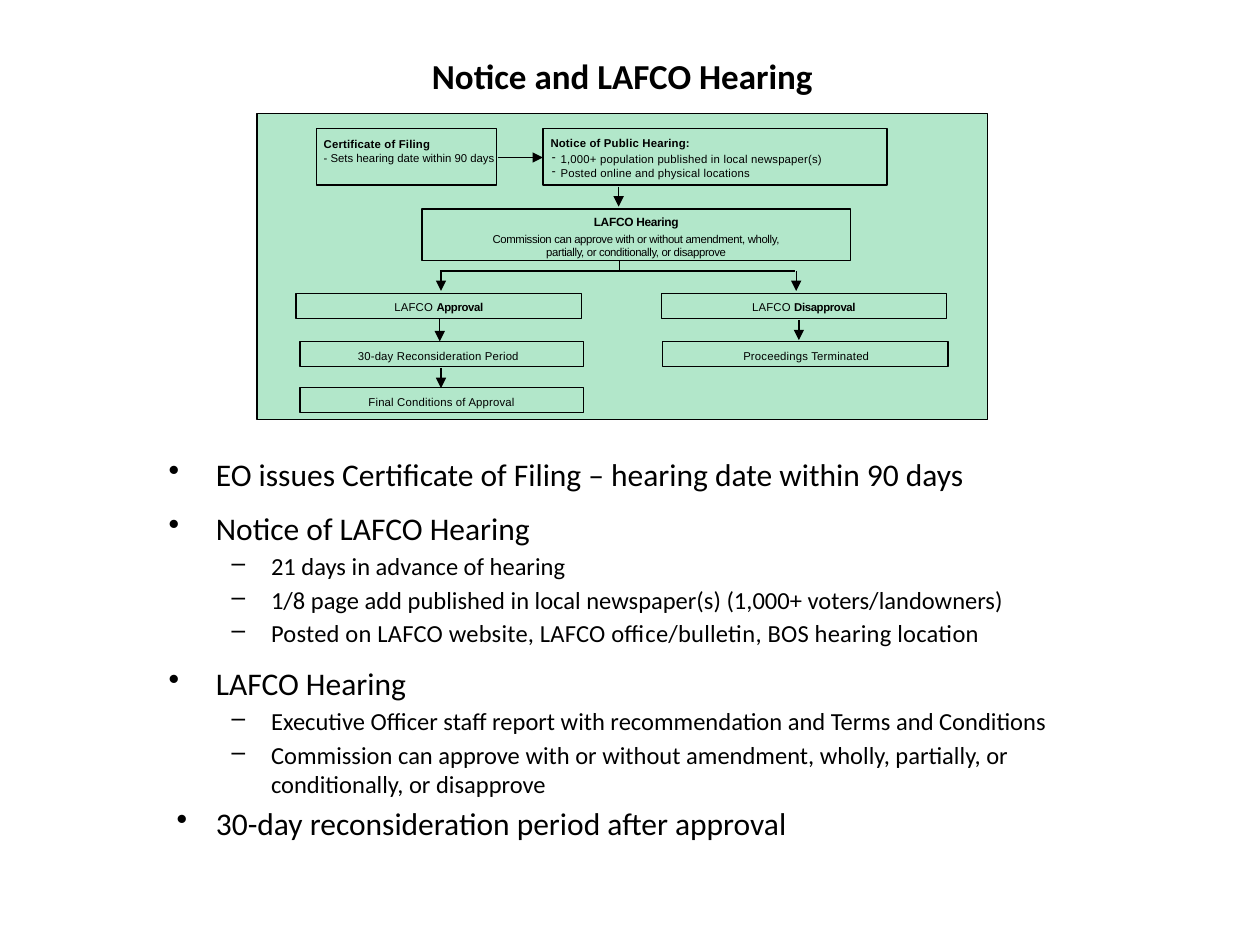
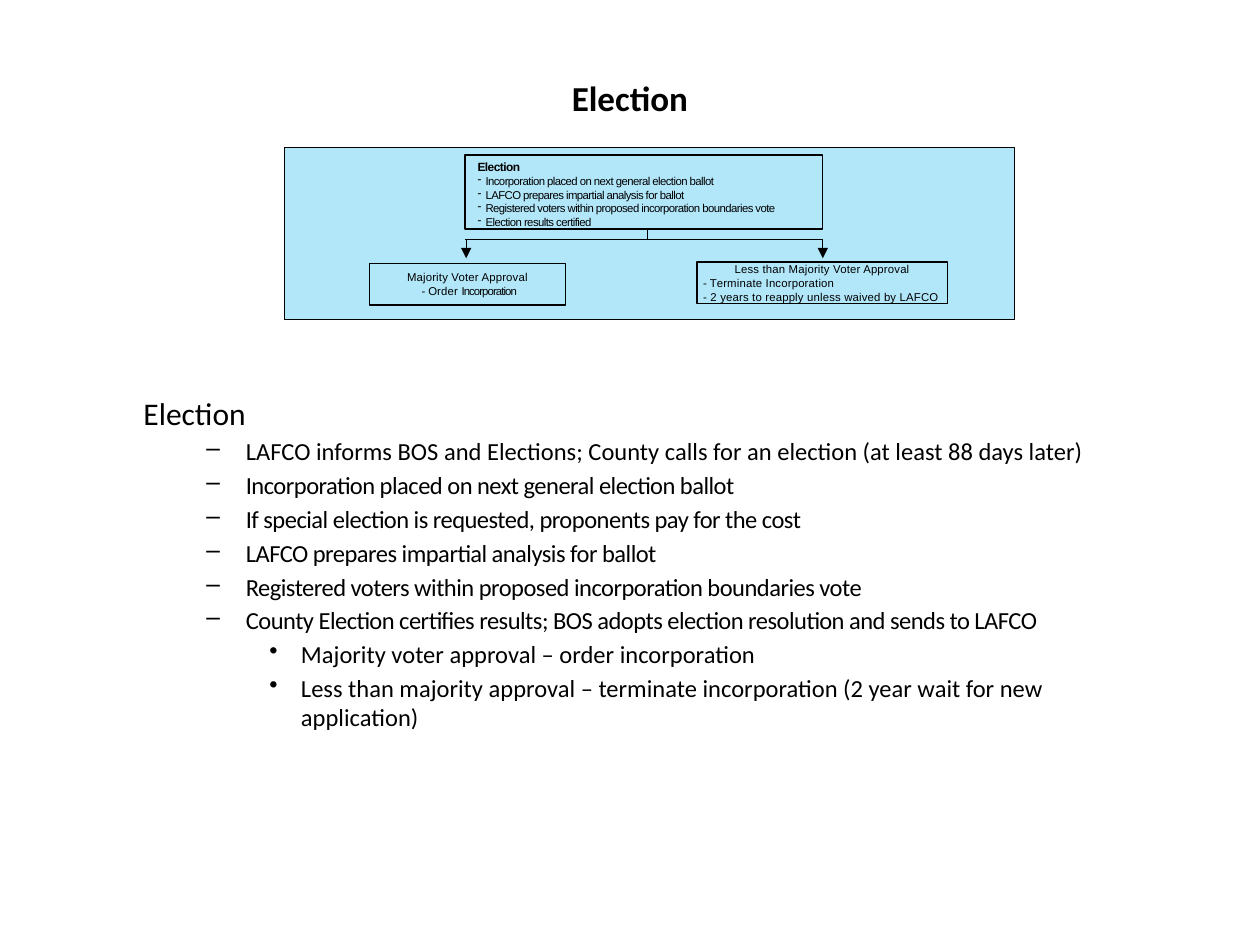
from lxml.etree import SubElement
from pptx import Presentation
from pptx.dml.color import RGBColor as RGB
from pptx.enum.shapes import MSO_CONNECTOR as CONNECTOR, MSO_SHAPE as SHAPE
from pptx.enum.text import MSO_ANCHOR as ANCHOR, PP_ALIGN as ALIGN
from pptx.oxml.ns import qn
from pptx.util import Pt

COLORS = {"ink": "000000", "hearing": "00B050", "election": "00B0F0"}
INK = RGB.from_string(COLORS["ink"])
LINE_WIDTH = Pt(0.75)
CENTER = ALIGN.CENTER

# Outline styles: list level, size, left margin, first-line indent, bullet
OUTLINE = {
    "heading": dict(level=0, size=18),
    "point": dict(level=0, size=18, margin=27, indent=-27, bullet="•"),
    "dash": dict(level=1, size=14, margin=58.5, indent=-22.5, bullet="–"),
    "dot": dict(level=2, size=14, margin=90, indent=-18, bullet="•"),
    "last": dict(level=1, size=18, margin=27, indent=-22.5, bullet="•"),
}


def add_text(page, at, paragraphs, font="Arial", inset=True):
    """Each paragraph is a dict; its runs are (text, spacing, bold)."""
    box = page.shapes.add_textbox(*map(Pt, at))
    frame = box.text_frame
    frame.word_wrap = True
    frame.vertical_anchor = ANCHOR.TOP
    if not inset:
        frame.margin_left = frame.margin_right = 0
        frame.margin_top = frame.margin_bottom = 0
    for index, item in enumerate(paragraphs):
        para = frame.add_paragraph() if index else frame.paragraphs[0]
        para.level = item.get("level", 0)
        para.alignment = item.get("align", ALIGN.LEFT)
        props = para._p.get_or_add_pPr()
        props.set("marL", str(Pt(item.get("margin", 0))))
        props.set("indent", str(Pt(item.get("indent", 0))))
        if "bullet" in item:
            SubElement(props, qn("a:buChar")).set("char", item["bullet"])
        para.space_before = Pt(item.get("before", 0) if index else 0)
        para.space_after = Pt(item.get("after", 0))
        para.line_spacing = item.get("lines", 1.0)
        for text, spacing, bold in item["runs"]:
            span = para.add_run()
            span.text = text
            span.font.name = font
            span.font.size = Pt(item.get("size", 6.5))
            span.font.bold = bold
            span.font.color.rgb = INK
            if spacing:
                span._r.get_or_add_rPr().set("spc", str(round(spacing * 100)))


def add_line(page, ends, arrow):
    line = page.shapes.add_connector(CONNECTOR.STRAIGHT, *map(Pt, ends))
    line.line.color.rgb = INK
    line.line.width = LINE_WIDTH
    SubElement(line._element.spPr, qn("a:effectLst"))
    if arrow:
        SubElement(line.line._get_or_add_ln(), qn("a:tailEnd")).set("type", "triangle")


# Flow-chart nodes: frame, label place, label paragraphs
hearing_nodes = [
    ((180.7, 73.4, 103.2, 32.4), (185, 78.5, 99.4, 15.8), [
        dict(runs=[("Certificate of Filing", 0.1, True)]),
        dict(runs=[("- Sets hearing date within 90 days", 0, False)]),
    ]),
    ((310.3, 73.4, 196.6, 32.4), (314.6, 77.8, 200.2, 24.5), [
        dict(runs=[("Notice of Public Hearing:", 0.1, True)]),
        dict(runs=[("1,000+ population published in local newspaper(s)", 0.1, False)],
             margin=5.8, indent=-5, bullet="-", before=0.7, lines=1.05),
        dict(runs=[("Posted online and physical locations", 0.1, False)],
             margin=5.8, indent=-5, bullet="-", lines=1.05),
    ]),
    ((241.2, 119.5, 244.8, 29.5), (241.2, 122.4, 244.8, 25.9), [
        dict(runs=[("LAFCO Hearing", -0.2, True)], size=6.8, align=CENTER, after=2),
        dict(runs=[("Commission can approve with or without amendment, wholly,", -0.2, False)],
             align=CENTER),
        dict(runs=[("partially, or conditionally, or disapprove", -0.2, False)], align=CENTER),
    ]),
    ((169.2, 167.8, 163, 14.4), (225.4, 171.4, 52.6, 7.9), [
        dict(runs=[("LAFCO ", 0.1, False), ("Approval", -0.2, True)]),
    ]),
    ((378, 167.8, 163, 14.4), (429.8, 171.4, 60.5, 7.9), [
        dict(runs=[("LAFCO ", 0.1, False), ("Disapproval", -0.2, True)]),
    ]),
    ((171.4, 195.1, 162, 14.4), (204.5, 199.4, 94.3, 7.9), [
        dict(runs=[("30-day Reconsideration Period", 0.1, False)]),
    ]),
    ((378.7, 195.1, 163, 14.4), (413.3, 199.4, 95, 7.9), [
        dict(runs=[("Proceedings Terminated", 0.1, False)], align=CENTER),
    ]),
    ((171.4, 221.3, 162, 14.4), (171.4, 225.4, 162, 7.9), [
        dict(runs=[("Final Conditions of Approval", 0.1, False)], align=CENTER, lines=1.05),
    ]),
]

ballot_steps = [
    "Incorporation placed on next general election ballot",
    "LAFCO prepares impartial analysis for ballot",
    "Registered voters within proposed incorporation boundaries vote",
    "Election results certified",
]
election_nodes = [
    ((265.7, 88.6, 204.5, 42.2), (272.9, 91.4, 172.8, 39.6),
     [dict(runs=[("Election", -0.3, True)], size=6.8)]
     + [dict(runs=[(step, -0.3, False)], margin=4.6, indent=-4.6, bullet="-")
        for step in ballot_steps]),
    ((211, 150.5, 112.3, 23.8), (211, 154.1, 112.3, 15.8), [
        dict(runs=[("Majority Voter Approval", 0.1, False)], align=CENTER),
        dict(runs=[("- O", 0, False), ("rder ", 0.1, False), ("Incorporation", -0.5, False)],
             align=CENTER, margin=2, before=0.4),
    ]),
    ((398.2, 149.8, 143.3, 23.8), (398.2, 149.8, 143.3, 23.8), [
        dict(runs=[("Less than Majority Voter Approval", 0.1, False)], align=CENTER),
        dict(runs=[("- T", 0, False), ("erminate Incorporation", 0.1, False)],
             margin=3.6, before=0.2),
        dict(runs=[("- 2 years to reapply unless waived by LAFCO", 0.1, False)],
             margin=3.6, before=0.2),
    ]),
]

# Outline rows: style, text, letter spacing, space after
hearing_outline = [
    ("point", "EO issues Certificate of Filing – hearing date within 90 days", 0, 6),
    ("point", "Notice of LAFCO Hearing", 0, 0),
    ("dash", "21 days in advance of hearing", 0, 0),
    ("dash", "1/8 page add published in local newspaper(s) (1,000+ voters/landowners)", 0, 0),
    ("dash", "Posted on LAFCO website, LAFCO office/bulletin, BOS hearing location", 0.1, 6),
    ("point", "LAFCO Hearing", 0, 0),
    ("dash", "Executive Officer staff report with recommendation and Terms and Conditions", 0, 0),
    ("dash", "Commission can approve with or without amendment, wholly, partially, or "
             "conditionally, or disapprove", 0, 0),
    ("last", "30-day reconsideration period after approval", 0, 0),
]
election_outline = [
    ("heading", "Election", 0, 0),
    ("dash", "LAFCO informs BOS and Elections; County calls for an election "
             "(at least 88 days later)", 0, 0),
    ("dash", "Incorporation placed on next general election ballot", -0.3, 0),
    ("dash", "If special election is requested, proponents pay for the cost", -0.3, 0),
    ("dash", "LAFCO prepares impartial analysis for ballot", -0.3, 0),
    ("dash", "Registered voters within proposed incorporation boundaries vote", -0.3, 0),
    ("dash", "County Election certifies results; BOS adopts election resolution and "
             "sends to LAFCO", -0.3, 0),
    ("dot", "Majority voter approval – order incorporation", 0, 0),
    ("dot", "Less than majority approval – terminate incorporation (2 year wait for "
            "new application)", 0, 0),
]

pages = [
    dict(title="Notice and LAFCO Hearing", title_at=(-4.3, 27.4, 720, 31.7),
         panel=(146.9, 64.8, 417.6, 175), color="hearing", nodes=hearing_nodes,
         lines=[(251.3, 154.8, 454.3, 154.8), (354.2, 149, 354.2, 155.2)],
         arrows=[(284.4, 90, 310.3, 90), (353.5, 106.6, 353.5, 118.1),
                 (252, 154.8, 252, 166.3), (455, 154.8, 455, 166.3),
                 (251.3, 182.2, 251.3, 195.1), (456.5, 182.9, 456.5, 194.4),
                 (252, 210.2, 252, 221.8)],
         body=(89.3, 256.3, 565.2, 267.1), outline=hearing_outline),
    dict(title="Election", title_at=(0, 40.3, 720, 31.7),
         panel=(162.7, 84.2, 416.9, 98.6), color="election", nodes=election_nodes,
         lines=[(265.7, 136.8, 470.2, 136.8), (370.1, 131, 370.1, 137)],
         arrows=[(266.4, 137, 266.4, 147.6), (470.2, 136.8, 470.2, 147.6)],
         body=(74.9, 221.8, 565.2, 244.8), outline=election_outline),
]

deck = Presentation()
deck.slide_width, deck.slide_height = Pt(720), Pt(540)

for content in pages:
    page = deck.slides.add_slide(deck.slide_layouts[6])

    # Title
    add_text(page, content["title_at"],
             [dict(runs=[(content["title"], 0, True)], size=20, align=CENTER)], "Calibri")

    # Tinted panel first, then the node frames on it
    frames = [content["panel"]] + [node[0] for node in content["nodes"]]
    for index, at in enumerate(frames):
        box = page.shapes.add_shape(SHAPE.RECTANGLE, *map(Pt, at))
        box.shadow.inherit = False
        box.line.color.rgb = INK
        box.line.width = LINE_WIDTH
        if index:
            box.fill.background()
        else:
            box.fill.solid()
            box.fill.fore_color.rgb = RGB.from_string(COLORS[content["color"]])
            tint = box._element.spPr.find(qn("a:solidFill"))[0]
            SubElement(tint, qn("a:alpha")).set("val", "30000")

    # Node labels
    for _, at, paragraphs in content["nodes"]:
        add_text(page, at, paragraphs, inset=False)

    # Connecting lines and arrows
    for ends in content["lines"]:
        add_line(page, ends, arrow=False)
    for ends in content["arrows"]:
        add_line(page, ends, arrow=True)

    # Outline below the panel
    rows = []
    for style, text, spacing, after in content["outline"]:
        look = OUTLINE[style]
        rows.append(dict(look, runs=[(text, spacing, False)], after=after,
                         before=round(look["size"] * 0.18, 1)))
    add_text(page, content["body"], rows, "Calibri")

deck.save("out.pptx")
